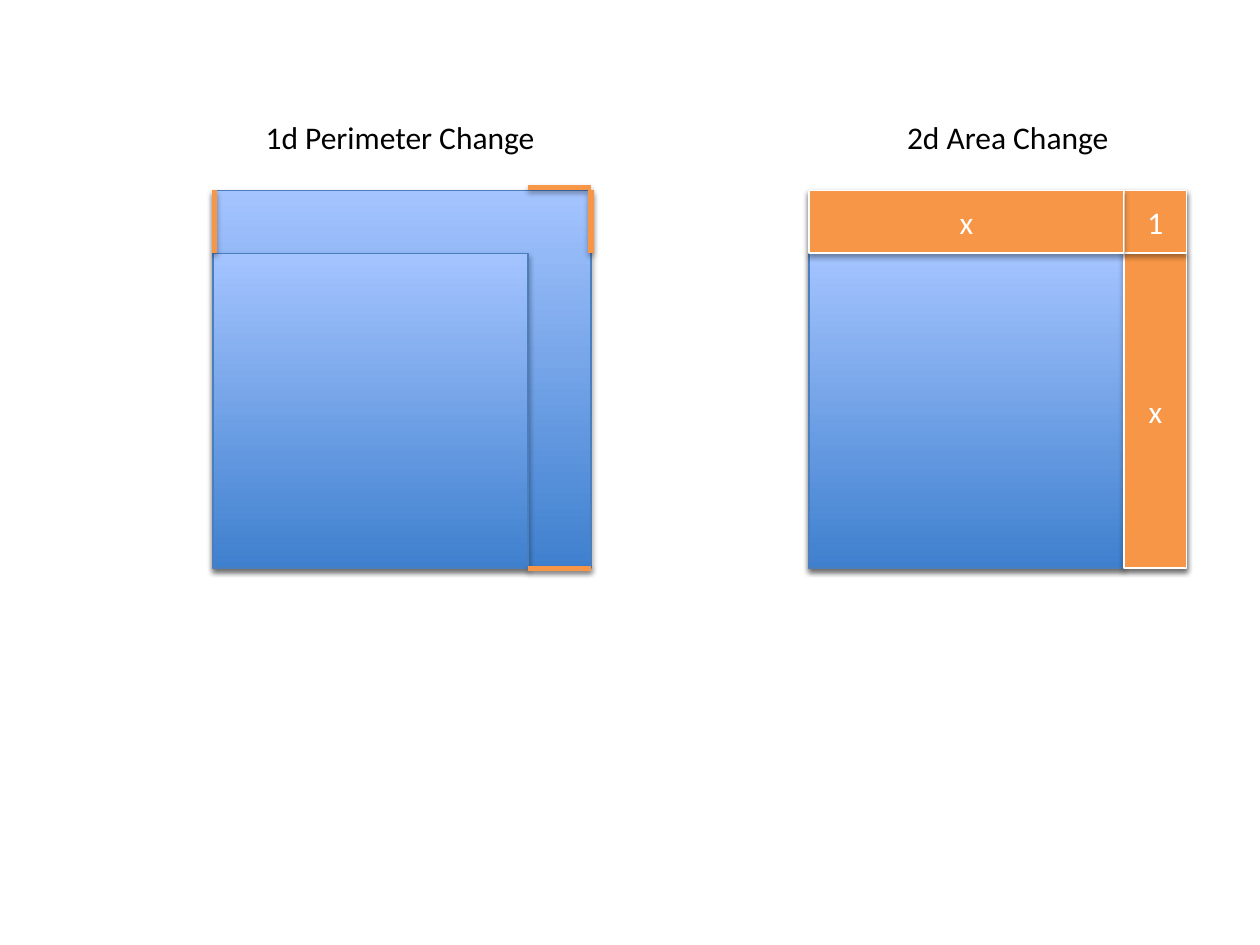
from lxml import etree
from pptx import Presentation
from pptx import util as u
from pptx.dml.color import RGBColor
from pptx.enum import shapes, text
from pptx.oxml.ns import nsdecls

PX = 9144  # 100 px to the inch
FONT = "Calibri"
DARK = RGBColor(0x3F, 0x80, 0xCE)
LIGHT = RGBColor(0xA4, 0xC4, 0xFF)
EDGE = RGBColor(0x4B, 0x7E, 0xBC)
ORANGE = RGBColor(0xF7, 0x96, 0x46)
WHITE = RGBColor(0xFF, 0xFF, 0xFF)
BLACK = RGBColor(0, 0, 0)

SIDE = 250  # the square of side x
STEP = 50   # the added unit
FULL = SIDE + STEP

SHADOW = (
    f'<a:effectLst {nsdecls("a")}>'
    '<a:outerShdw blurRad="40000" dist="23000" dir="5400000" rotWithShape="0">'
    '<a:srgbClr val="000000"><a:alpha val="35000"/></a:srgbClr>'
    '</a:outerShdw></a:effectLst>'
)


def px(*sizes):
    return [u.Emu(size * PX) for size in sizes]


def shade(shape):
    """Add the soft shadow; call after fill and line are set."""
    shape._element.spPr.append(etree.fromstring(SHADOW))


def write(frame, words, color):
    para = frame.paragraphs[0]
    para.text = words
    para.font.size = u.Pt(18)
    para.font.name = FONT
    para.font.color.rgb = color
    return para


def add_rect(slide, box, edge):
    rect = slide.shapes.add_shape(shapes.MSO_SHAPE.RECTANGLE, *px(*box))
    rect.line.color.rgb = edge
    rect.line.width = u.Pt(0.75)
    return rect


def add_square(slide, left, top, side):
    square = add_rect(slide, (left, top, side, side), EDGE)
    square.fill.gradient()
    square.fill.gradient_angle = 90
    for stop, color in zip(square.fill.gradient_stops, (DARK, LIGHT)):
        stop.color.rgb = color
    shade(square)


def add_strip(slide, box, label):
    strip = add_rect(slide, box, WHITE)
    strip.fill.solid()
    strip.fill.fore_color.rgb = ORANGE
    shade(strip)
    strip.text_frame.vertical_anchor = text.MSO_ANCHOR.MIDDLE
    para = write(strip.text_frame, label, WHITE)
    para.alignment = text.PP_ALIGN.CENTER


def add_mark(slide, start, end):
    mark = slide.shapes.add_connector(
        shapes.MSO_CONNECTOR.STRAIGHT, *px(*start, *end))
    mark.line.color.rgb = ORANGE
    mark.line.width = u.Pt(3)
    shade(mark)


def add_head(slide, box, words):
    frame = slide.shapes.add_textbox(*px(*box)).text_frame
    frame.word_wrap = False
    frame.auto_size = text.MSO_AUTO_SIZE.SHAPE_TO_FIT_TEXT
    write(frame, words, BLACK)


def add_pair(slide, left, top):
    """Place the full square and the smaller one in its lower left corner."""
    add_square(slide, left, top, FULL)
    add_square(slide, left, top + STEP, SIDE)


def add_area(slide, left, top):
    add_pair(slide, left, top)
    right, low = left + SIDE, top + STEP
    add_strip(slide, (right, low, STEP, SIDE), "x")
    add_strip(slide, (right, top, STEP, STEP), "1")
    add_strip(slide, (left, top, SIDE, STEP), "x")
    add_head(slide, (left + 68, top - 62, 182, 40), "2d Area Change")


def add_edges(slide, left, top):
    """Place the squares with the added parts of the perimeter marked."""
    add_pair(slide, left, top)
    right = left + FULL
    for y in (top + FULL, top - 2):
        add_mark(slide, (left + SIDE, y), (right, y))
    for x in (right, left + 1):
        add_mark(slide, (x, top + STEP), (x, top))
    add_head(slide, (left + 32, top - 62, 237, 40), "1d Perimeter Change")


def main():
    deck = Presentation()
    deck.slide_width, deck.slide_height = px(1000, 750)
    slide = deck.slides.add_slide(deck.slide_layouts[6])
    add_area(slide, 642, 151)
    add_edges(slide, 169, 151)
    deck.save("out.pptx")


if __name__ == "__main__":
    main()
